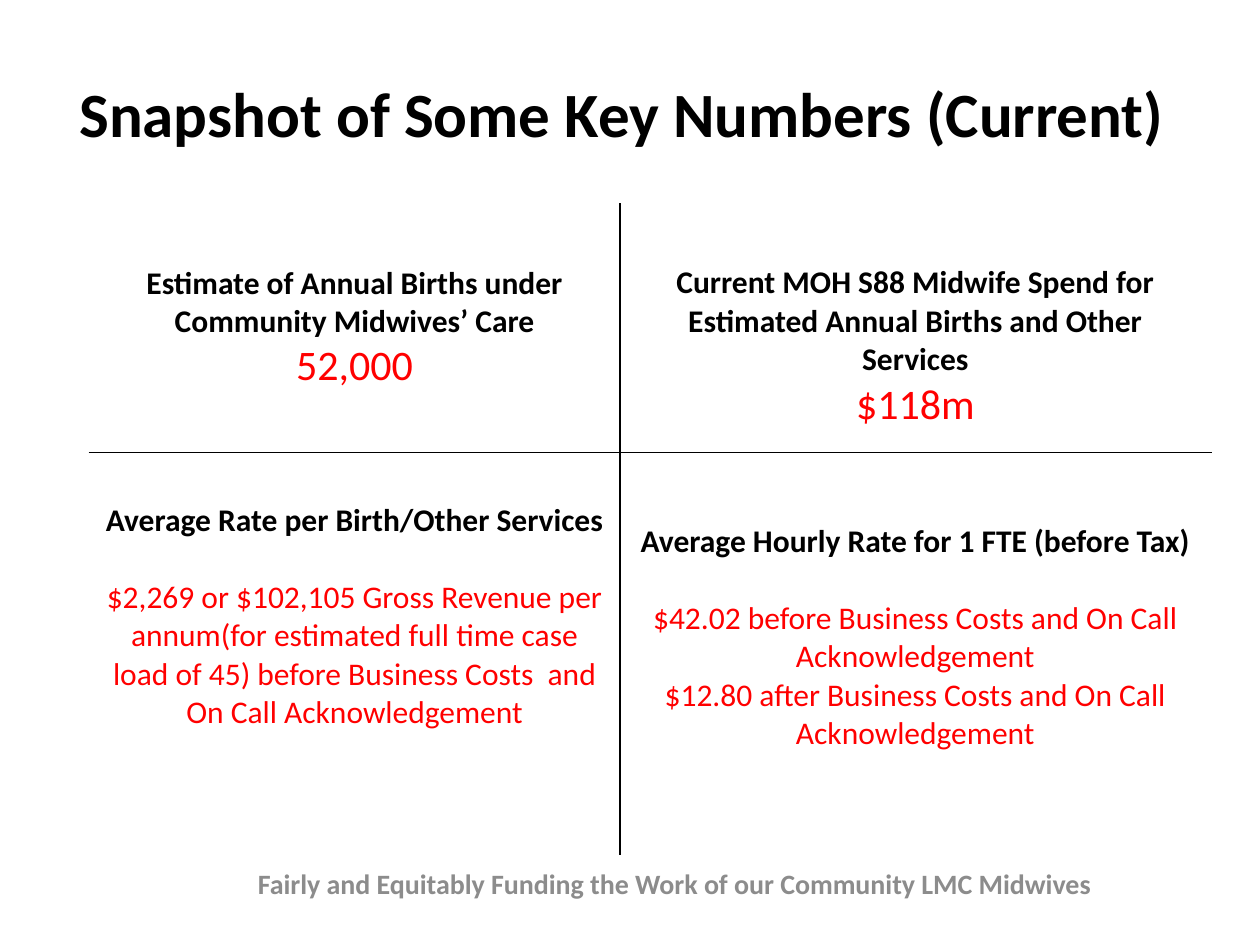
import dataclasses

import lxml.etree
import pptx
import pptx.dml.color
import pptx.enum.text
import pptx.oxml.ns
import pptx.util

Inches = pptx.util.Inches
Pt = pptx.util.Pt
BLACK, RED, GREY = "000000", "FF0000", "8C8C8C"
MIDDLE = pptx.enum.text.MSO_ANCHOR.MIDDLE
TOP = pptx.enum.text.MSO_ANCHOR.TOP
LINE_GAP = 22  # one text line at 18 points


@dataclasses.dataclass
class Line:
    text: str
    size: int = 18
    color: str = BLACK
    bold: bool = True
    gap: int = 0


@dataclasses.dataclass
class Quadrant:
    row: int
    column: int
    borders: str
    lines: list[Line]
    margin_top: float = 0.05
    margin_bottom: float = 0.05


QUADRANTS = [
    Quadrant(0, 0, "RB", [
        Line("Estimate of Annual Births under Community Midwives’ Care"),
        Line("52,000", 24, RED, False),
    ]),
    Quadrant(0, 1, "LB", [
        Line("Current MOH S88 Midwife Spend for Estimated Annual Births and Other Services"),
        Line("$118m", 24, RED, False),
    ], margin_top=0.35),
    Quadrant(1, 0, "RT", [
        Line("Average Rate per Birth/Other Services"),
        Line("$2,269 or $102,105 Gross Revenue per annum(for estimated full time case "
             "load of 45) before Business Costs  and On Call Acknowledgement",
             18, RED, False, LINE_GAP),
    ], margin_bottom=0.64),
    Quadrant(1, 1, "LT", [
        Line("Average Hourly Rate for 1 FTE (before Tax)"),
        Line("$42.02 before Business Costs and On Call Acknowledgement",
             18, RED, False, LINE_GAP),
        Line("$12.80 after Business Costs and On Call Acknowledgement", 18, RED, False),
    ], margin_bottom=0.31),
]


def set_color(target, color: str) -> None:
    target.rgb = pptx.dml.color.RGBColor.from_string(color)


def write_lines(frame, lines: list[Line]) -> None:
    for index, line in enumerate(lines):
        para = frame.add_paragraph() if index else frame.paragraphs[0]
        para.alignment = pptx.enum.text.PP_ALIGN.CENTER
        para.space_before = Pt(line.gap)
        span = para.add_run()
        span.text = line.text
        style = {"name": "Calibri", "size": Pt(line.size), "bold": line.bold}
        for name, value in style.items():
            setattr(span.font, name, value)
        set_color(span.font.color, line.color)


def write_box(box, place: tuple, anchor, line: Line) -> None:
    for name, value in zip(("left", "top", "width", "height"), place):
        setattr(box, name, Inches(value))
    frame = box.text_frame
    settings = {"word_wrap": True, "vertical_anchor": anchor,
                "auto_size": pptx.enum.text.MSO_AUTO_SIZE.NONE}
    for name, value in settings.items():
        setattr(frame, name, value)
    write_lines(frame, [line])


def add_border(cell, side: str) -> None:
    qn = pptx.oxml.ns.qn
    properties = cell._tc.get_or_add_tcPr()
    border = lxml.etree.SubElement(properties, qn(f"a:ln{side}"), w=str(Pt(1)))
    fill = lxml.etree.SubElement(border, qn("a:solidFill"))
    lxml.etree.SubElement(fill, qn("a:srgbClr"), val=BLACK)


def fill_quadrant(table, quadrant: Quadrant) -> None:
    cell = table.cell(quadrant.row, quadrant.column)
    for side in quadrant.borders:
        add_border(cell, side)
    cell.fill.background()
    cell.vertical_anchor = MIDDLE
    cell.margin_top = Inches(quadrant.margin_top)
    cell.margin_bottom = Inches(quadrant.margin_bottom)
    write_lines(cell.text_frame, quadrant.lines)


def main() -> None:
    deck = pptx.Presentation()
    deck.slide_width, deck.slide_height = Inches(10), Inches(7.5)
    page = deck.slides.add_slide(deck.slide_layouts[5])

    # Title
    write_box(page.shapes.title, (0.34, 0.54, 9.19, 0.71), TOP,
              Line("Snapshot of Some Key Numbers (Current)", 36))

    # Four key numbers, divided by a cross
    table = page.shapes.add_table(
        2, 2, Inches(0.71), Inches(1.62), Inches(8.9), Inches(5.17)).table
    table.first_row = table.horz_banding = False
    for column, width in zip(table.columns, (4.21, 4.69)):
        column.width = Inches(width)
    for row, height in zip(table.rows, (1.97, 3.2)):
        row.height = Inches(height)
    for quadrant in QUADRANTS:
        fill_quadrant(table, quadrant)

    # Footer
    footer = page.shapes.add_textbox(0, 0, 0, 0)
    write_box(footer, (1.85, 6.84, 7.01, 0.34), MIDDLE,
              Line("Fairly and Equitably Funding the Work of our Community LMC Midwives",
                   16, GREY))

    deck.save("out.pptx")


if __name__ == "__main__":
    main()
